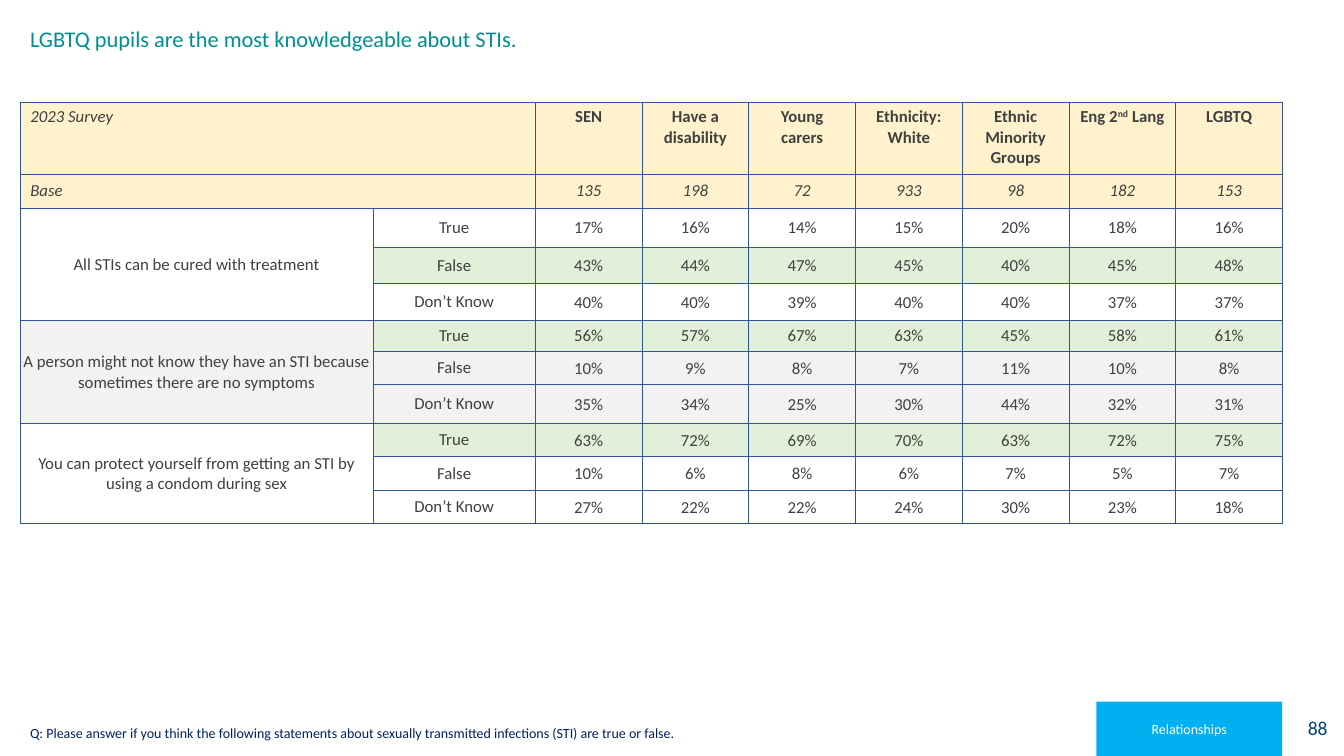
from lxml import etree
from pptx import Presentation
from pptx.dml.color import RGBColor
from pptx.enum import shapes, text
from pptx.oxml import ns
from pptx.util import Cm, Pt

CREAM, GREEN, GREY = "FFF2CC", "E2F0D9", "F2F2F2"
LEFT, CENTER, RIGHT = text.PP_ALIGN.LEFT, text.PP_ALIGN.CENTER, text.PP_ALIGN.RIGHT
TOP, MIDDLE, BOTTOM = text.MSO_ANCHOR.TOP, text.MSO_ANCHOR.MIDDLE, text.MSO_ANCHOR.BOTTOM


def paint(fill, color):
    """Fill with a hex colour, or leave empty when there is none."""
    if color:
        fill.solid()
        fill.fore_color.rgb = RGBColor.from_string(color)
    else:
        fill.background()


def style_text(frame, size, color, align=LEFT, bold=False, italic=False):
    for para in frame.paragraphs:
        para.alignment = align
        for span in para.runs:
            font = span.font
            font.name, font.size, font.bold, font.italic = "Calibri", Pt(size), bold, italic
            font.color.rgb = RGBColor.from_string(color)


deck = Presentation()
deck.slide_width, deck.slide_height = Cm(33.87), Cm(19.05)
page = deck.slides.add_slide(deck.slide_layouts[6])

# Title, page number, section tag and question
labels = [
    ("LGBTQ pupils are the most knowledgeable about STIs.",
     (0.51, 0.51, 31.83, 2.49), None, 16, "008E91", LEFT, TOP),
    ("88", (32.21, 17.65, 1.5, 1.37), "FFFFFF", 14, "004376", RIGHT, MIDDLE),
    ("Relationships", (27.63, 17.68, 4.68, 1.37), "00B0F0", 10, "FFFFFF", CENTER, MIDDLE),
    ("Q: Please answer if you think the following statements about sexually "
     "transmitted infections (STI) are true or false.",
     (0.51, 18.11, 26.37, 0.69), None, 10, "002060", LEFT, BOTTOM),
]
for words, place, fill, size, color, align, anchor in labels:
    place = [Cm(length) for length in place]
    if fill:
        box = page.shapes.add_shape(shapes.MSO_SHAPE.RECTANGLE, *place)
        box.shadow.inherit = False
        box.line.fill.background()
        paint(box.fill, fill)
    else:
        box = page.shapes.add_textbox(*place)
    frame = box.text_frame
    frame.word_wrap = True
    frame.vertical_anchor = anchor
    frame.text = words
    style_text(frame, size, color, align)

# Survey table: two heading rows, then three answers for each statement
headings = ["2023 Survey", "", "SEN", "Have a disability", "Young carers",
            "Ethnicity: White", "Ethnic Minority Groups", "Eng 2nd Lang", "LGBTQ"]
base = ["Base", "", "135", "198", "72", "933", "98", "182", "153"]
answers = ["True", "False", "Don’t Know"]
statements = [
    ("All STIs can be cured with treatment", "False", None,
     [(17, 16, 14, 15, 20, 18, 16), (43, 44, 47, 45, 40, 45, 48),
      (40, 40, 39, 40, 40, 37, 37)]),
    ("A person might not know they have an STI because sometimes there are no symptoms",
     "True", GREY,
     [(56, 57, 67, 63, 45, 58, 61), (10, 9, 8, 7, 11, 10, 8),
      (35, 34, 25, 30, 44, 32, 31)]),
    ("You can protect yourself from getting an STI by using a condom during sex",
     "True", None,
     [(63, 72, 69, 70, 63, 72, 75), (10, 6, 8, 6, 7, 5, 7),
      (27, 22, 22, 24, 30, 23, 18)]),
]
rows = [(headings, [CREAM] * 9), (base, [CREAM] * 9)]
for statement, correct, shade, results in statements:
    for answer, shares in zip(answers, results):
        first = statement if answer == answers[0] else ""
        answer_fill = GREEN if answer == correct else shade
        rows.append(([first, answer] + [f"{share}%" for share in shares],
                     [shade] + [answer_fill] * 8))

widths = [8.89, 4.09] + [2.69] * 7
heights = [1.83, 0.84, 0.98, 0.93, 0.91, 0.79, 0.84, 0.98, 0.84, 0.84, 0.84]
table = page.shapes.add_table(len(rows), len(widths), Cm(0.51), Cm(2.57),
                              Cm(sum(widths)), Cm(sum(heights))).table
table.first_row = table.horz_banding = False
for column, width in zip(table.columns, widths):
    column.width = Cm(width)
for row, height in zip(table.rows, heights):
    row.height = Cm(height)

for r, (words, fills) in enumerate(rows):
    for c, (word, fill) in enumerate(zip(words, fills)):
        cell = table.cell(r, c)
        properties = cell._tc.get_or_add_tcPr()
        for side in ("lnL", "lnR", "lnT", "lnB"):
            line = etree.SubElement(properties, ns.qn(f"a:{side}"), w=str(Pt(0.5)))
            solid = etree.SubElement(line, ns.qn("a:solidFill"))
            etree.SubElement(solid, ns.qn("a:srgbClr"), val="2F5597")
        paint(cell.fill, fill)
        cell.vertical_anchor = MIDDLE if r else TOP
        if r > 1 and c != 1:
            cell.margin_left = cell.margin_right = cell.margin_top = Cm(0.03)
            cell.margin_bottom = 0
        para = cell.text_frame.paragraphs[0]
        if word == "Eng 2nd Lang":
            for part in ("Eng 2", "nd", " Lang"):
                para.add_run().text = part
            para.runs[1]._r.get_or_add_rPr().set("baseline", "30000")
        elif word:
            para.text = word
        style_text(cell.text_frame, 12, "404040",
                   LEFT if r < 2 and c == 0 else CENTER,
                   bold=r == 0 and c > 0, italic=r == 1 or (r == 0 and c == 0))

for r in (0, 1):
    table.cell(r, 0).merge(table.cell(r, 1))
for r in range(2, len(rows), len(answers)):
    table.cell(r, 0).merge(table.cell(r + len(answers) - 1, 0))

deck.save("out.pptx")
